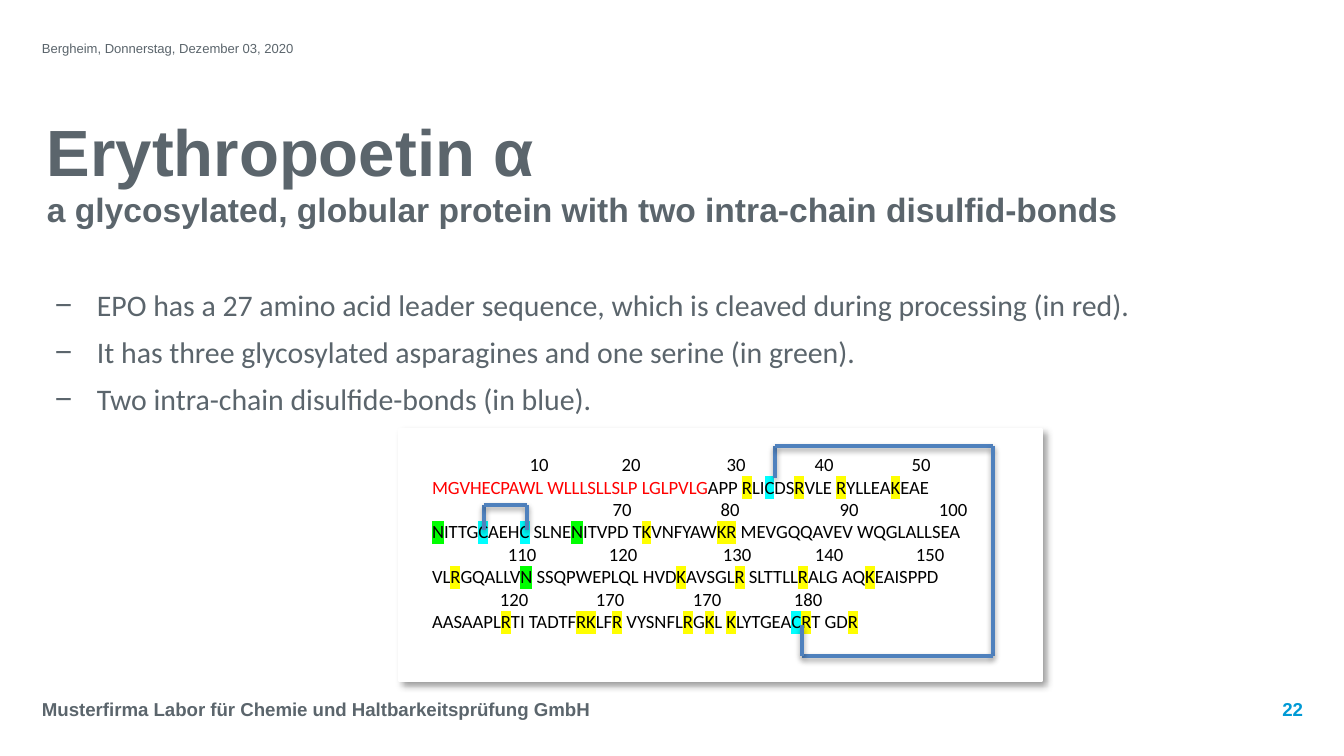
from itertools import groupby

from lxml import etree
from pptx import Presentation
from pptx.dml.color import RGBColor
from pptx.enum.shapes import MSO_CONNECTOR, MSO_SHAPE
from pptx.enum.text import MSO_ANCHOR, PP_ALIGN
from pptx.oxml.ns import qn
from pptx.util import Pt

RECT, LINE = MSO_SHAPE.RECTANGLE, MSO_CONNECTOR.STRAIGHT
LEFT, RIGHT = PP_ALIGN.LEFT, PP_ALIGN.RIGHT
TOP, BOTTOM = MSO_ANCHOR.TOP, MSO_ANCHOR.BOTTOM
PX = 914400 / 134.4
GREY, BLUE, CYAN = "5B656C", "4F81BD", "009AD5"
RED, BLACK, WHITE = "FF0000", "000000", "FFFFFF"

DATE = "Bergheim, Donnerstag, Dezember 03, 2020"
FOOT = "Musterfirma Labor für Chemie und Haltbarkeitsprüfung GmbH"
PAGE = "22"
TITLE = [
    ("Erythropoetin α", 35),
    ("a glycosylated, globular protein with two intra-chain disulfid-bonds", 18),
]
POINTS = [
    "EPO has a 27 amino acid leader sequence, which is cleaved during processing (in red).",
    "It has three glycosylated asparagines and one serine (in green).",
    "Two intra-chain disulfide-bonds (in blue).",
]
# Residues to mark; a small n is a glycosylated asparagine
MARKS = {"R": "FFFF00", "K": "FFFF00", "C": "00FFFF", "n": "00FF00"}
# Ruler numbers with their centres in px, leader, chain
ROWS = [
    ([("10", 539), ("20", 631), ("30", 736), ("40", 824), ("50", 921)],
     "MGVHECPAWL WLLLSLLSLP LGLPVLG", "APP RLICDSRVLE RYLLEAKEAE"),
    ([("70", 622), ("80", 730), ("90", 849), ("100", 953)],
     "", "nITTGCAEHC SLNEnITVPD TKVNFYAWKR MEVGQQAVEV WQGLALLSEA"),
    ([("110", 522), ("120", 623), ("130", 737), ("140", 829), ("150", 930)],
     "", "VLRGQALLVn SSQPWEPLQL HVDKAVSGLR SLTTLLRALG AQKEAISPPD"),
    ([("120", 514), ("170", 610), ("170", 707), ("180", 808)],
     "", "AASAAPLRTI TADTFRKLFR VYSNFLRGKL KLYTGEACRT GDR"),
]
SEQ_X, PAD = 419, 13
SHORT = [(484, 530), (484, 505), (527, 505), (527, 530)]
LONG = [(775, 478), (775, 446), (993, 446), (993, 656), (802, 656), (802, 625)]


def px(n):
    return round(n * PX)


def rgb(code):
    return RGBColor.from_string(code)


def sub(node, tag, **attrs):
    return etree.SubElement(node, qn(tag), {k: str(v) for k, v in attrs.items()})


def style(font, name, size, color, bold=False):
    font.name, font.bold = name, bold
    font.color.rgb = rgb(color)
    if size:
        font.size = Pt(size)


def shade(shape, alpha, blur, dist, angle):
    fx = sub(shape._element.spPr, "a:effectLst")
    out = sub(fx, "a:outerShdw", blurRad=Pt(blur), dist=Pt(dist),
              dir=angle * 60000, algn="ctr", rotWithShape=0)
    sub(sub(out, "a:srgbClr", val=BLACK), "a:alpha", val=alpha * 1000)


def frame(x, y, w, h, pads=(0, 0, 0, 0), anchor=TOP):
    tf = slide.shapes.add_textbox(px(x), px(y), px(w), px(h)).text_frame
    tf.word_wrap, tf.vertical_anchor = True, anchor
    tf.margin_left, tf.margin_top, tf.margin_right, tf.margin_bottom = map(px, pads)
    return tf


def label(tf, text, size, color, bold=False, align=LEFT):
    para = tf.paragraphs[0]
    para.text, para.alignment = text, align
    style(para.font, "Arial", size, color, bold)


def paras(tf, count):
    return [tf.paragraphs[0]] + [tf.add_paragraph() for _ in range(count - 1)]


def bond(shapes, points):
    for a, b in zip(points, points[1:]):
        line = shapes.add_connector(LINE, *map(px, a + b))
        line.line.color.rgb, line.line.width = rgb(BLUE), Pt(2)
        shade(line, 38, 3.1, 1.6, 90)


prs = Presentation()
prs.slide_width, prs.slide_height = px(1344), px(756)
slide = prs.slides.add_slide(prs.slide_layouts[6])

# Footer and date
label(frame(42, 691, 672, 30, (0, 7, 13, 0)), FOOT, 10, GREY, True)
label(frame(42, 40, 672, 16), DATE, 7, GREY)

# Card behind the sequence
card = slide.shapes.add_shape(RECT, px(399), px(429), px(643), px(252))
card.fill.solid()
card.fill.fore_color.rgb = card.line.color.rgb = rgb(WHITE)
card.line.width = Pt(0.75)
shade(card, 40, 4, 3, 45)

# Title with subtitle
para = frame(47, 105, 1122, 176, (0, 6, 0, 0)).paragraphs[0]
style(para.font, "Arial", None, GREY, True)
for i, (text, size) in enumerate(TITLE):
    if i:
        para.add_line_break()
    run = para.add_run()
    run.text, run.font.size = text, Pt(size)

# Page number
label(frame(1181, 680, 122, 40, anchor=BOTTOM), PAGE, 10, CYAN, True, RIGHT)

# Bullet points
tf = frame(42, 280, 1177, 248, (13, 7, 13, 7))
for para, text in zip(paras(tf, len(POINTS)), POINTS):
    para.text, para.space_after = text, Pt(6)
    ppr = para._p.get_or_add_pPr()
    ppr.set("marL", str(px(42)))
    ppr.set("indent", str(-px(42)))
    sub(ppr, "a:buFont", typeface="Arial")
    sub(ppr, "a:buChar", char="−")
    style(para.font, "Calibri", 16, GREY)

# Sequence: a ruler line above each chain line
tf = frame(SEQ_X, 446, 589, 195, (PAD, 7, PAD, 7))
lines = paras(tf, 2 * len(ROWS))
for ruler, chain, (ticks, leader, rest) in zip(lines[::2], lines[1::2], ROWS):
    ruler.text = "".join("\t" + num for num, _ in ticks)
    tabs = sub(ruler._p.get_or_add_pPr(), "a:tabLst")
    for _, mid in ticks:
        sub(tabs, "a:tab", pos=px(mid - SEQ_X - PAD), algn="ctr")
    for para in (ruler, chain):
        style(para.font, "Calibri", 10, BLACK)
    if leader:
        run = chain.add_run()
        run.text, run.font.color.rgb = leader, rgb(RED)
    for mark, part in groupby(rest, MARKS.get):
        run = chain.add_run()
        run.text = "".join(part).upper()
        if mark:
            light = sub(run._r.get_or_add_rPr(), "a:highlight")
            sub(light, "a:srgbClr", val=mark)

# Disulfide bonds
bond(slide.shapes.add_group_shape().shapes, SHORT)
bond(slide.shapes, LONG)

prs.save("out.pptx")
